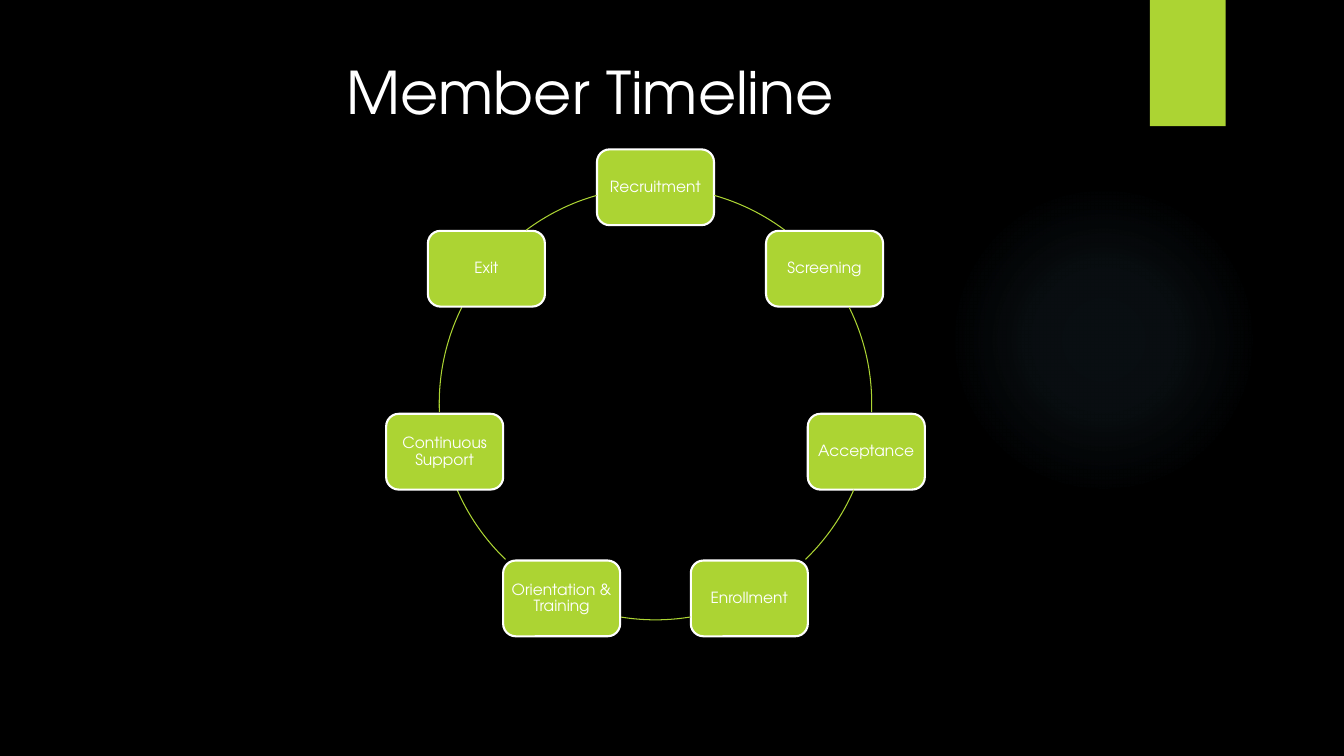
"""Build the Member Timeline slide: seven steps on a ring."""
from math import cos, radians, sin

from lxml import etree
from pptx import Presentation
from pptx.dml.color import RGBColor
from pptx.enum.shapes import MSO_SHAPE
from pptx.enum.text import MSO_ANCHOR, PP_ALIGN
from pptx.oxml.ns import qn
from pptx.util import Cm, Pt

OVAL, RECTANGLE = MSO_SHAPE.OVAL, MSO_SHAPE.RECTANGLE
ROUNDED, ARC = MSO_SHAPE.ROUNDED_RECTANGLE, MSO_SHAPE.ARC
CENTER, TOP, MIDDLE = PP_ALIGN.CENTER, MSO_ANCHOR.TOP, MSO_ANCHOR.MIDDLE

BLACK = RGBColor(0x00, 0x00, 0x00)
WHITE = RGBColor(0xFF, 0xFF, 0xFF)
LIME = RGBColor(0xAC, 0xD4, 0x33)
SKY = RGBColor(0x7A, 0xC4, 0xF0)

RING_X, RING_Y, RING_RADIUS = 16.52, 10.17, 5.45
STEP_WIDTH, STEP_HEIGHT = 2.95, 1.91

# Each step with the start and end of the arc after it, in degrees from the top.
STEPS = [
    ("Recruitment", 15.8, 36.7),
    ("Screening", 63.6, 92.3),
    ("Acceptance", 113.5, 136.1),
    ("Enrollment", 170.7, 189.3),
    ("Orientation & Training", 223.9, 246.5),
    ("Continuous Support", 267.7, 296.4),
    ("Exit", 323.3, 344.2),
]


class TimelineSlide:
    """Holds the style and the current slide."""

    font = "TeX Gyre Adventor"

    def __init__(self, presentation):
        self.slide = presentation.slides.add_slide(presentation.slide_layouts[5])
        background = self.slide.background.fill
        background.solid()
        background.fore_color.rgb = BLACK

    def add_text(self, paragraph, text, size):
        paragraph.alignment = CENTER
        run = paragraph.add_run()
        run.text = text
        run.font.name = self.font
        run.font.size = Pt(size)
        run.font.color.rgb = WHITE

    def title(self, text, left, top, width, height):
        title = self.slide.shapes.title
        title.left, title.top = Cm(left), Cm(top)
        title.width, title.height = Cm(width), Cm(height)
        title.text_frame.vertical_anchor = TOP
        title.text_frame.word_wrap = True
        self.add_text(title.text_frame.paragraphs[0], text, 42)

    def shape(self, kind, left, top, width, height, fill=None):
        shape = self.slide.shapes.add_shape(
            kind, Cm(left), Cm(top), Cm(width), Cm(height))
        shape.shadow.inherit = False
        shape.line.fill.background()
        if fill is None:
            shape.fill.background()
        else:
            shape.fill.solid()
            shape.fill.fore_color.rgb = fill
        return shape

    def glow(self, left, top, size):
        glow = self.shape(OVAL, left, top, size, size)
        glow.fill.gradient()
        gradient = glow._element.spPr.find(qn("a:gradFill"))
        for child in list(gradient):
            gradient.remove(child)
        stops = etree.SubElement(gradient, qn("a:gsLst"))
        for position, opacity in ((0, 7), (36, 6), (69, 0)):
            stop = etree.SubElement(stops, qn("a:gs"), pos=str(position * 1000))
            color = etree.SubElement(stop, qn("a:srgbClr"), val=str(SKY))
            etree.SubElement(color, qn("a:alpha"), val=str(opacity * 1000))
        circle = etree.SubElement(gradient, qn("a:path"), {"path": "circle"})
        etree.SubElement(circle, qn("a:fillToRect"),
                         l="50000", t="50000", r="50000", b="50000")

    def arc(self, start, end):
        arc = self.shape(ARC, RING_X - RING_RADIUS, RING_Y - RING_RADIUS,
                         2 * RING_RADIUS, 2 * RING_RADIUS)
        arc.line.color.rgb = LIME
        arc.line.width = Pt(0.75)
        for index, angle in enumerate((start, end)):
            arc.adjustments[index] = (angle - 90) % 360 * 0.6

    def step(self, text, angle):
        x = RING_X + RING_RADIUS * sin(radians(angle))
        y = RING_Y - RING_RADIUS * cos(radians(angle))
        step = self.shape(ROUNDED, x - STEP_WIDTH / 2, y - STEP_HEIGHT / 2,
                          STEP_WIDTH, STEP_HEIGHT, LIME)
        step.line.color.rgb = WHITE
        step.line.width = Pt(1.5)
        frame = step.text_frame
        frame.word_wrap = True
        frame.vertical_anchor = MIDDLE
        frame.margin_left = frame.margin_right = Cm(0.12)
        frame.margin_top = frame.margin_bottom = Cm(0.12)
        frame.paragraphs[0].line_spacing = 0.9
        self.add_text(frame.paragraphs[0], text, 11)


def main():
    presentation = Presentation()
    presentation.slide_width, presentation.slide_height = Cm(33.87), Cm(19.05)
    timeline = TimelineSlide(presentation)
    timeline.glow(23.9, 4.65, 7.82)
    timeline.shape(RECTANGLE, 28.98, 0, 1.91, 3.18, LIME)
    timeline.title("Member Timeline", 1.8, 1.27, 26.14, 3.89)
    for index, (label, arc_start, arc_end) in enumerate(STEPS):
        timeline.step(label, index * 360 / len(STEPS))
        timeline.arc(arc_start, arc_end)
    presentation.save("out.pptx")


if __name__ == "__main__":
    main()
